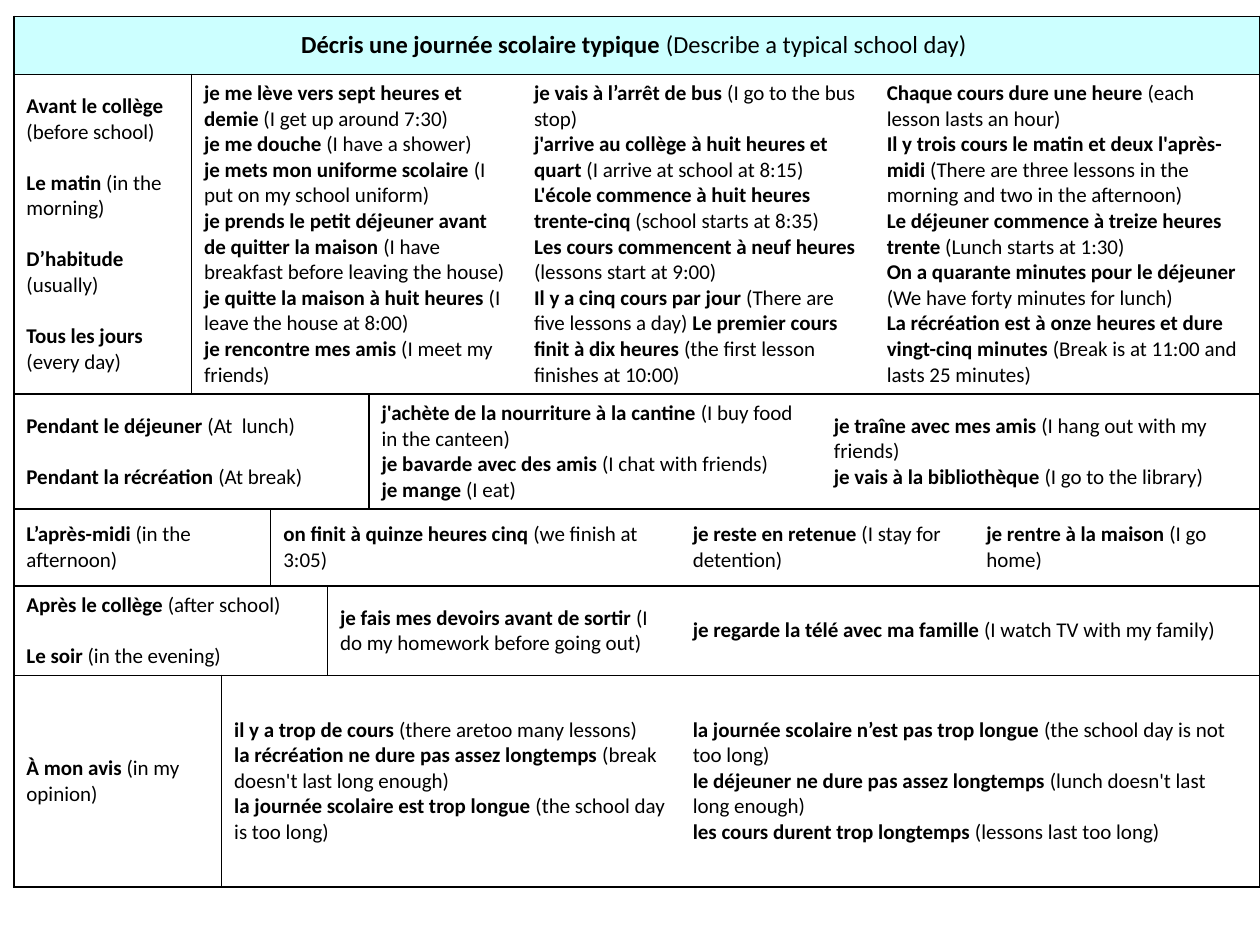
import pptx
import pptx.util
import pptx.dml.color
import pptx.enum.text
import pptx.oxml.ns
from lxml import etree

THEME = {"font": "Calibri", "ink": "000000", "head": "CCFFFF",
         "title": 14, "body": 12, "gap": 14.6, "line": 1}

COLS = [1.41, 0.13, 0.39, 0.45, 0.33, 1.21, 1.26, 1.12, 0.42, 0.79, 2.27]

# Each row: height, then cells of (columns spanned, lines); a line alternates bold and plain.
ROWS = [
    (0.46, [(11, [("Décris une journée scolaire typique ", "(Describe a typical school day) ")])]),
    (2.37, [
        (1, [("Avant le collège ", "(before school)"),
             ("Le matin ", "(in the morning)"),
             ("D’habitude ", "(usually)"),
             ("Tous les jours ", "(every day)")]),
        (5, [("je me lève vers sept heures et demie ", "(I get up around 7:30)"),
             ("je me douche ", "(I have a shower)"),
             ("je mets mon uniforme scolaire ", "(I put on my school uniform)"),
             ("je prends le petit déjeuner avant de quitter la maison ",
              "(I have breakfast before leaving the house)"),
             ("je quitte la maison à huit heures ", "(I leave the house at 8:00)"),
             ("je rencontre mes amis ", "(I meet my friends)")]),
        (3, [("je vais à l’arrêt de bus ", "(I go to the bus stop)"),
             ("j'arrive au collège à huit heures et quart ", "(I arrive at school at 8:15)"),
             ("L'école commence à huit heures trente-cinq ", "(school starts at 8:35)"),
             ("Les cours commencent à neuf heures ", "(lessons start at 9:00)"),
             ("Il y a cinq cours par jour ", "(There are five lessons a day)",
              " Le premier cours finit à dix heures ", "(the first lesson finishes at 10:00)")]),
        (2, [("Chaque cours dure une heure ", "(each lesson lasts an hour)"),
             ("Il y trois cours le matin et deux l'après-midi ",
              "(There are three lessons in the morning and two in the afternoon)"),
             ("Le déjeuner commence à treize heures trente ", "(Lunch starts at 1:30)"),
             ("On a quarante minutes pour le déjeuner ", "(We have forty minutes for lunch)"),
             ("La récréation est à onze heures et dure vingt-cinq minutes ",
              "(Break is at 11:00 and lasts 25 minutes)")])]),
    (0.79, [
        (5, [("Pendant le déjeuner ", "(At  lunch)"),
             ("Pendant la récréation ", "(At break)")]),
        (3, [("j'achète de la nourriture à la cantine ", "(I buy food in the canteen)"),
             ("je bavarde avec des amis ", "(I chat with friends)"),
             ("je mange ", "(I eat)")]),
        (3, [("je traîne avec mes amis ", "(I hang out with my friends)"),
             ("je vais à la bibliothèque ", "(I go to the library)")])]),
    (0.61, [
        (3, [("L’après-midi", " (in the afternoon)")]),
        (4, [("on finit à quinze heures cinq ", "(we finish at 3:05)")]),
        (3, [("je reste en retenue ", "(I stay for detention)")]),
        (1, [("je rentre à la maison ", "(I go home)")])]),
    (0.61, [
        (4, [("Après le collège ", "(after school)"),
             ("Le soir ", "(in the evening)")]),
        (3, [("je fais mes devoirs avant de sortir ", "(I do my homework before going out)")]),
        (4, [("je regarde la télé avec ma famille ", "(I watch TV with my family)")])]),
    (1.68, [
        (2, [("À mon avis ", "(in my opinion)")]),
        (5, [("il y a trop de cours ", "(there aretoo many lessons)"),
             ("la récréation ne dure pas assez longtemps ", "(break doesn't last long enough)"),
             ("la journée scolaire est trop longue ", "(the school day is too long)")]),
        (4, [("la journée scolaire n’est pas trop longue ", "(the school day is not too long)"),
             ("le déjeuner ne dure pas assez longtemps ", "(lunch doesn't last long enough)"),
             ("les cours durent trop longtemps ", "(lessons last too long)")])]),
]


def edge(cell, sides):
    """Draw the named sides of a cell and clear the others."""
    qn = pptx.oxml.ns.qn
    props = cell._tc.get_or_add_tcPr()
    for side in "LRTB":
        line = etree.SubElement(props, qn("a:ln" + side),
                                w=str(int(pptx.util.Pt(THEME["line"]))))
        if side in sides:
            fill = etree.SubElement(line, qn("a:solidFill"))
            etree.SubElement(fill, qn("a:srgbClr"), val=THEME["ink"])
        else:
            etree.SubElement(line, qn("a:noFill"))


def write(cell, lines, head, label):
    """Fill a cell with lines whose runs alternate bold and plain."""
    cell.vertical_anchor = pptx.enum.text.MSO_ANCHOR.MIDDLE
    frame = cell.text_frame
    for i, line in enumerate(lines):
        para = frame.add_paragraph() if i else frame.paragraphs[0]
        para.font.name = THEME["font"]
        para.font.size = pptx.util.Pt(THEME["title" if head else "body"])
        para.font.color.rgb = pptx.dml.color.RGBColor.from_string(THEME["ink"])
        if head:
            para.alignment = pptx.enum.text.PP_ALIGN.CENTER
        if label and i:
            para.space_before = pptx.util.Pt(THEME["gap"])
        for j, text in enumerate(line):
            run = para.add_run()
            run.text = text
            run.font.bold = j % 2 == 0


def main():
    """Build the school day sentence table."""
    inch = pptx.util.Inches
    deck = pptx.Presentation()
    deck.slide_width, deck.slide_height = inch(10), inch(7.5)
    slide = deck.slides.add_slide(deck.slide_layouts[6])
    high = sum(row[0] for row in ROWS)
    grid = slide.shapes.add_table(len(ROWS), len(COLS), inch(0.11), inch(0.13),
                                  inch(sum(COLS)), inch(high)).table
    grid.first_row = grid.horz_banding = False
    for col, width in zip(grid.columns, COLS):
        col.width = inch(width)
    for r, (height, cells) in enumerate(ROWS):
        grid.rows[r].height = inch(height)
        start = 0
        for n, (span, lines) in enumerate(cells):
            sides = "TB" + "L" * (n < 2) + "R" * (n in (0, len(cells) - 1))
            for c in range(start, start + span):
                cell = grid.cell(r, c)
                edge(cell, sides)
                if r:
                    cell.fill.background()
                else:
                    cell.fill.solid()
                    cell.fill.fore_color.rgb = pptx.dml.color.RGBColor.from_string(THEME["head"])
            first = grid.cell(r, start)
            if span > 1:
                first.merge(grid.cell(r, start + span - 1))
            write(first, lines, r == 0, n == 0)
            start += span
    deck.save("out.pptx")


if __name__ == "__main__":
    main()
